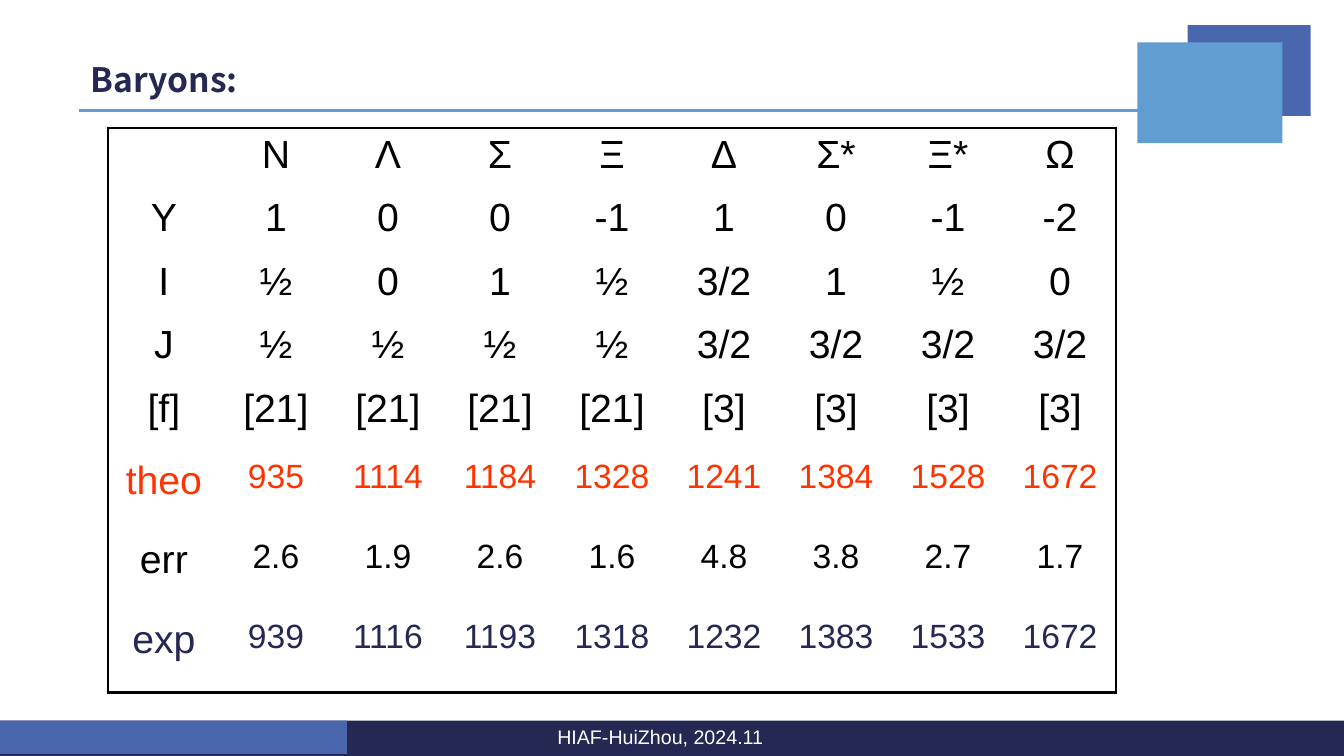
"""Build the slide comparing theoretical and experimental baryon masses."""
from dataclasses import dataclass

import pptx
import pptx.dml.color
import pptx.enum.shapes
import pptx.enum.text
import pptx.util
from lxml import etree
from pptx.util import Inches


@dataclass(frozen=True)
class Theme:
    navy: str = "242852"
    indigo: str = "4A66AC"
    sky: str = "629DD1"
    black: str = "000000"
    white: str = "FFFFFF"
    red: str = "FF3300"
    body_font: str = "Arial"
    title_font: str = "Noto Sans CJK JP"
    label_size: int = 28
    mass_size: int = 24
    title_size: int = 24
    footer_size: int = 14
    line_width: float = 2.25


theme = Theme()
rgb = pptx.dml.color.RGBColor.from_string
center = pptx.enum.text.PP_ALIGN.CENTER
namespace = "{http://schemas.openxmlformats.org/drawingml/2006/main}"


def style(paragraph, size, color, font=theme.body_font, bold=False):
    paragraph.font.size = pptx.util.Pt(size)
    paragraph.font.name = font
    paragraph.font.bold = bold
    paragraph.font.color.rgb = rgb(color)


def add_border(cell, side, visible):
    line = etree.SubElement(cell._tc.get_or_add_tcPr(), f"{namespace}ln{side}")
    if visible:
        line.set("w", str(pptx.util.Pt(theme.line_width)))
        fill = etree.SubElement(line, f"{namespace}solidFill")
        etree.SubElement(fill, f"{namespace}srgbClr", val=theme.black)
    else:
        etree.SubElement(line, f"{namespace}noFill")


deck = pptx.Presentation()
deck.slide_width = Inches(13.33)
deck.slide_height = Inches(7.5)
slide = deck.slides.add_slide(deck.slide_layouts[6])

title_rule = slide.shapes.add_connector(
    pptx.enum.shapes.MSO_CONNECTOR.STRAIGHT,
    Inches(0.78), Inches(1.1), Inches(11.33), Inches(1.1))
title_rule.line.color.rgb = rgb(theme.sky)
title_rule.line.width = pptx.util.Pt(theme.line_width)
etree.SubElement(title_rule._element.spPr, f"{namespace}effectLst")

for left, top, width, height, color in [
    (0, 7.15, 13.33, 0.35, theme.navy),
    (11.78, 0.25, 1.22, 0.9, theme.indigo),
    (11.28, 0.42, 1.44, 1, theme.sky),
    (0, 7.15, 3.44, 0.33, theme.indigo),
]:
    block = slide.shapes.add_shape(
        pptx.enum.shapes.MSO_SHAPE.RECTANGLE,
        Inches(left), Inches(top), Inches(width), Inches(height))
    block.shadow.inherit = False
    block.fill.solid()
    block.fill.fore_color.rgb = rgb(color)
    block.line.fill.background()

footer = slide.shapes.add_textbox(
    Inches(4.7), Inches(7.14), Inches(3.7), Inches(0.47)).text_frame
footer.word_wrap = True
footer.text = "HIAF-HuiZhou, 2024.11"
footer.paragraphs[0].alignment = center
style(footer.paragraphs[0], theme.footer_size, theme.white)

title = slide.shapes.add_textbox(
    Inches(0.8), Inches(0.42), Inches(10.53), Inches(0.73)).text_frame
title.word_wrap = True
title.vertical_anchor = pptx.enum.text.MSO_ANCHOR.MIDDLE
title.text = "Baryons:"
style(title.paragraphs[0], theme.title_size, theme.navy, theme.title_font, True)

baryons = [
    ["", "N", "Λ", "Σ", "Ξ", "Δ", "Σ*", "Ξ*", "Ω"],
    ["Y", "1", "0", "0", "-1", "1", "0", "-1", "-2"],
    ["I", "½", "0", "1", "½", "3/2", "1", "½", "0"],
    ["J"] + ["½"] * 4 + ["3/2"] * 4,
    ["[f]"] + ["[21]"] * 4 + ["[3]"] * 4,
    ["theo", "935", "1114", "1184", "1328", "1241", "1384", "1528", "1672"],
    ["err", "2.6", "1.9", "2.6", "1.6", "4.8", "3.8", "2.7", "1.7"],
    ["exp", "939", "1116", "1193", "1318", "1232", "1383", "1533", "1672"],
]
row_heights = [0.63] * 4 + [0.71] + [0.79] * 3
row_colors = {"theo": theme.red, "exp": theme.navy}
mass_rows = {"theo", "err", "exp"}
last_row = len(baryons) - 1
last_column = len(baryons[0]) - 1

table = slide.shapes.add_table(
    len(baryons), len(baryons[0]),
    Inches(1.07), Inches(1.27), Inches(10), Inches(5.59)).table
table.first_row = False
table.horz_banding = False

for r, (quantities, height) in enumerate(zip(baryons, row_heights)):
    table.rows[r].height = Inches(height)
    row_label = quantities[0]
    for c, quantity in enumerate(quantities):
        cell = table.cell(r, c)
        cell.text = quantity
        paragraph = cell.text_frame.paragraphs[0]
        paragraph.alignment = center
        is_mass = row_label in mass_rows and c > 0
        style(paragraph, theme.mass_size if is_mass else theme.label_size,
              row_colors.get(row_label, theme.black))
        add_border(cell, "L", c == 0)
        add_border(cell, "R", c == last_column)
        add_border(cell, "T", r == 0)
        add_border(cell, "B", r == last_row)
        cell.fill.background()

deck.save("out.pptx")
